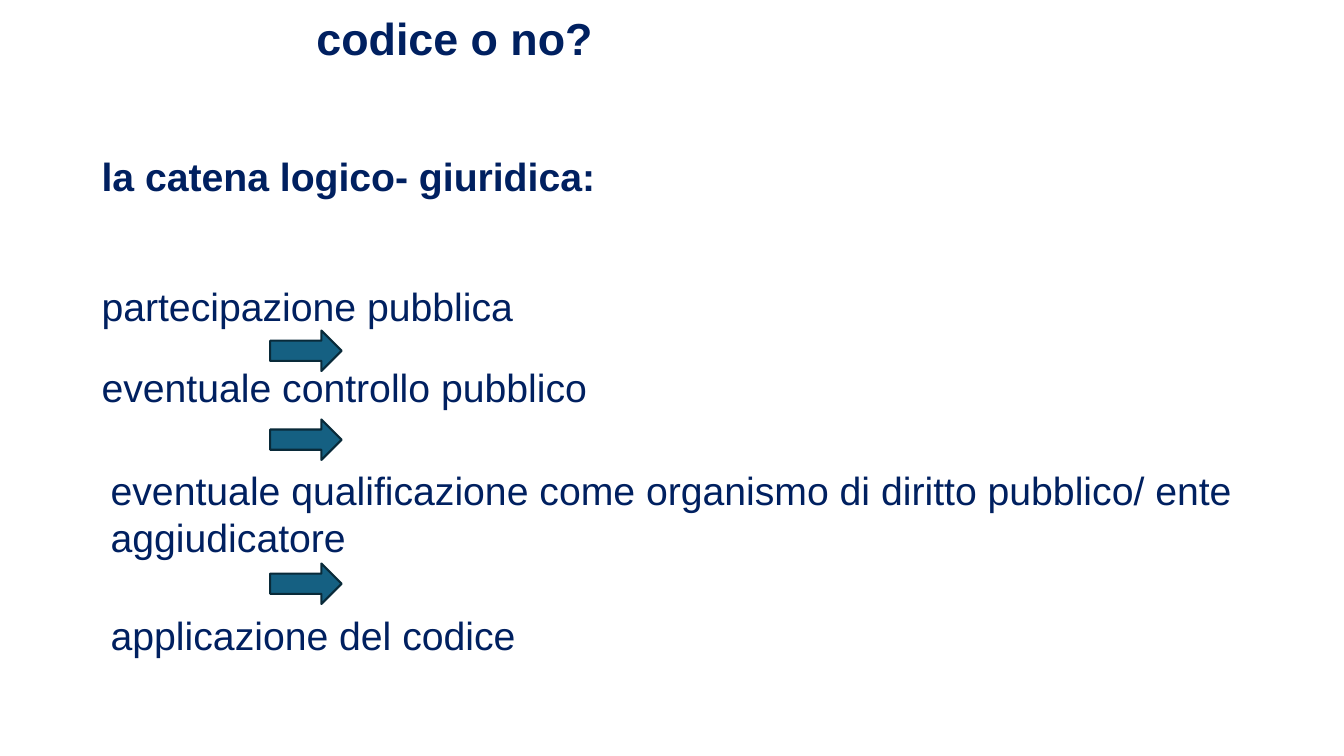
from pptx import Presentation
from pptx.dml.color import RGBColor
from pptx.enum.shapes import MSO_SHAPE
from pptx.enum.text import MSO_ANCHOR, PP_ALIGN
from pptx.util import Cm, Pt

NAVY = RGBColor(0x00, 0x20, 0x60)
TEAL = RGBColor(0x15, 0x60, 0x82)
DARK_TEAL = RGBColor(0x09, 0x2A, 0x39)
RIGHT_ARROW = MSO_SHAPE.RIGHT_ARROW
TOP = MSO_ANCHOR.TOP
LEFT = PP_ALIGN.LEFT


def format_paragraph(paragraph, size, bold=False):
    paragraph.alignment = LEFT
    for run in paragraph.runs:
        run.font.name = "Arial"
        run.font.size = Pt(size)
        run.font.bold = bold
        run.font.color.rgb = NAVY


def add_text(left, top, width, height, text):
    box = slide.shapes.add_textbox(Cm(left), Cm(top), Cm(width), Cm(height))
    text_frame = box.text_frame
    text_frame.word_wrap = True
    text_frame.text = text
    for paragraph in text_frame.paragraphs:
        format_paragraph(paragraph, 28)
    return text_frame


presentation = Presentation()
presentation.slide_width = Cm(33.87)
presentation.slide_height = Cm(19.05)
slide = presentation.slides.add_slide(presentation.slide_layouts[5])

# Title
title = slide.shapes.title
title.left, title.top, title.width, title.height = Cm(7.72), Cm(0.13), Cm(26.15), Cm(1.63)
title.text_frame.text = "codice o no?"
title.text_frame.vertical_anchor = TOP
format_paragraph(title.text_frame.paragraphs[0], 32, bold=True)

# Heading and first link of the chain
chain = add_text(2.31, 2.82, 31.98, 9.83,
                 "la catena logico- giuridica:\npartecipazione pubblica")
chain.margin_top = Cm(1.02)
heading, first_link = chain.paragraphs
format_paragraph(heading, 28, bold=True)
first_link.space_before = Pt(59)

# Following links, each with the arrow that leads to it
links = [
    (8.33, 2.31, 9.04, 16.28, 1.45, "eventuale controllo pubblico"),
    (10.57, 2.54, 11.63, 31.55, 2.64,
     "eventuale qualificazione come organismo di diritto pubblico/ ente aggiudicatore"),
    (14.2, 2.54, 15.27, 11.1, 1.45, "applicazione del codice"),
]
for arrow_top, left, top, width, height, text in links:
    arrow = slide.shapes.add_shape(RIGHT_ARROW, Cm(6.81), Cm(arrow_top), Cm(1.8), Cm(1.02))
    arrow.shadow.inherit = False
    arrow.fill.solid()
    arrow.fill.fore_color.rgb = TEAL
    arrow.line.color.rgb = DARK_TEAL
    arrow.line.width = Pt(1.5)
    add_text(left, top, width, height, text)

presentation.save("out.pptx")
